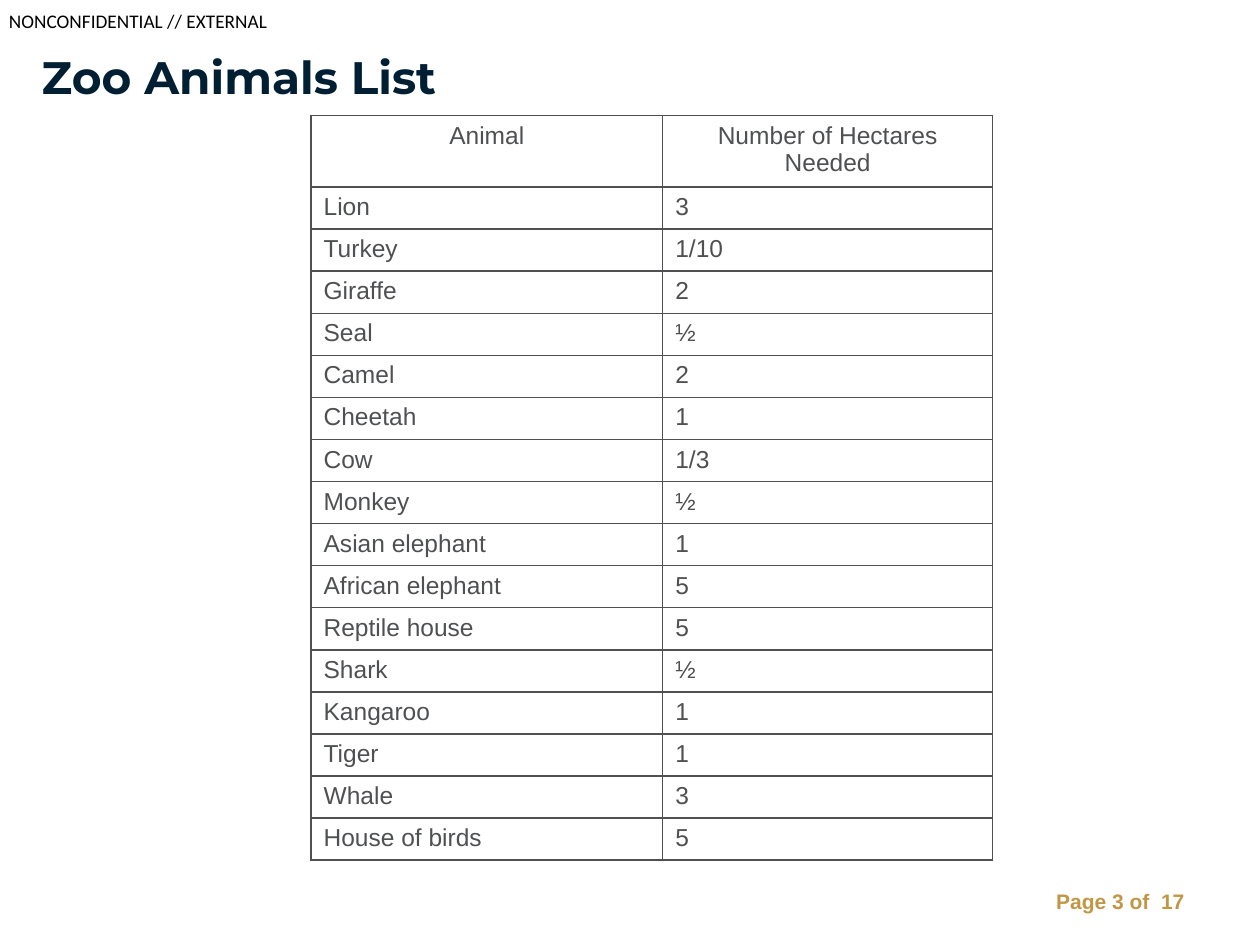
from lxml import etree
from pptx import Presentation
from pptx.dml.color import RGBColor
from pptx.enum import text as t
from pptx.oxml import ns
from pptx.util import Cm, Pt

MARK = "NONCONFIDENTIAL // EXTERNAL"
TITLE = "Zoo Animals List"
PAGE = "Page 3 of  17"
HEAD = ("Animal", "Number of Hectares Needed")
ZOO = [
    ("Lion", "3"), ("Turkey", "1/10"), ("Giraffe", "2"), ("Seal", "½"),
    ("Camel", "2"), ("Cheetah", "1"), ("Cow", "1/3"), ("Monkey", "½"),
    ("Asian elephant", "1"), ("African elephant", "5"),
    ("Reptile house", "5"), ("Shark", "½"), ("Kangaroo", "1"),
    ("Tiger", "1"), ("Whale", "3"), ("House of birds", "5"),
]
GREY, NAVY, GOLD, BLACK = "4F5052", "001F33", "C19745", "000000"
LEFT, MID, RIGHT = t.PP_ALIGN.LEFT, t.PP_ALIGN.CENTER, t.PP_ALIGN.RIGHT


def color(code):
    return RGBColor.from_string(code)


def write(frame, words, face, size, code, bold=False, align=LEFT):
    para = frame.paragraphs[0]
    para.alignment = align
    run = para.add_run()
    run.text = words
    font = run.font
    font.name, font.size, font.bold = face, Pt(size), bold
    font.color.rgb = color(code)
    return para


def inset(frame, left, top, right, bottom):
    frame.margin_left, frame.margin_top = Cm(left), Cm(top)
    frame.margin_right, frame.margin_bottom = Cm(right), Cm(bottom)


def border(cell, code, width):
    """Draw all four edges, placed before the fill as the schema asks."""
    props = cell._tc.get_or_add_tcPr()
    for i, side in enumerate(("lnL", "lnR", "lnT", "lnB")):
        line = etree.Element(ns.qn("a:" + side), w=str(Pt(width)))
        fill = etree.SubElement(line, ns.qn("a:solidFill"))
        etree.SubElement(fill, ns.qn("a:srgbClr"), val=code)
        props.insert(i, line)


def add_zoo(slide):
    rows = [HEAD] + ZOO
    wide, high = (7.09, 6.65), 14.4
    table = slide.shapes.add_table(
        len(rows), len(HEAD), Cm(6.27), Cm(2.33), Cm(sum(wide)), Cm(high)
    ).table
    table.horz_banding = False
    for col, width in zip(table.columns, wide):
        col.width = Cm(width)
    for r, row in enumerate(rows):
        table.rows[r].height = Cm(high / len(rows))
        for c, words in enumerate(row):
            cell = table.cell(r, c)
            cell.fill.background()
            border(cell, GREY, 1)
            write(cell.text_frame, words, "Arial", 14, GREY,
                  align=LEFT if r else MID)


def main():
    deck = Presentation()
    deck.slide_width, deck.slide_height = Cm(25.4), Cm(19.05)
    slide = deck.slides.add_slide(deck.slide_layouts[5])

    title = slide.shapes.title
    title.left, title.top = Cm(0.84), Cm(0.43)
    title.width, title.height = Cm(22.86), Cm(2.26)
    frame = title.text_frame
    inset(frame, 0, 0.18, 0, 0)
    frame.vertical_anchor = t.MSO_ANCHOR.MIDDLE
    para = write(frame, TITLE, "Montserrat", 26, NAVY, bold=True)
    para.line_spacing = Pt(25)

    mark = slide.shapes.add_textbox(Cm(0.18), Cm(0.18), Cm(5.6), Cm(0.46))
    mark.text_frame.word_wrap = True
    inset(mark.text_frame, 0, 0, 0, 0)
    write(mark.text_frame, MARK, "Calibri", 11, BLACK)

    page = slide.shapes.add_textbox(Cm(18.21), Cm(17.65), Cm(5.92), Cm(1.02))
    page.text_frame.word_wrap = True
    page.text_frame.vertical_anchor = t.MSO_ANCHOR.MIDDLE
    write(page.text_frame, PAGE, "Arial", 12, GOLD, bold=True, align=RIGHT)

    add_zoo(slide)
    deck.save("out.pptx")


if __name__ == "__main__":
    main()
